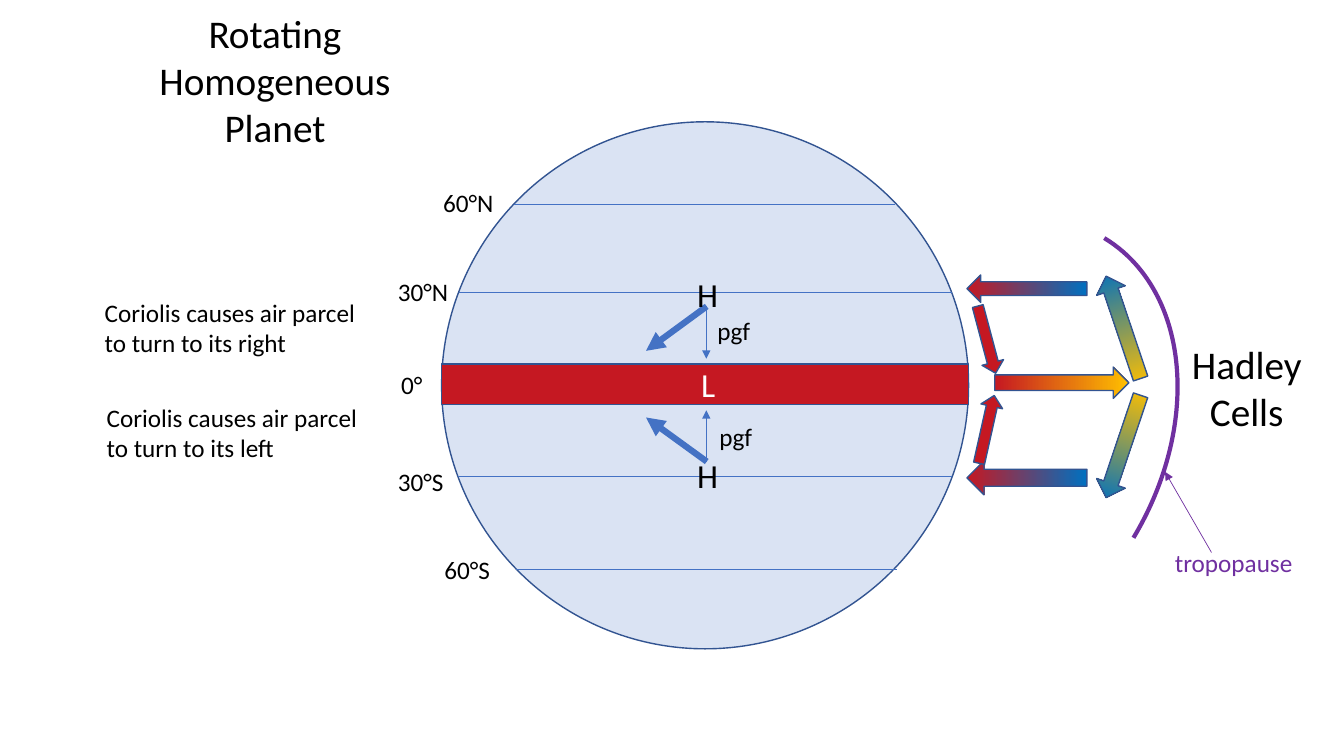
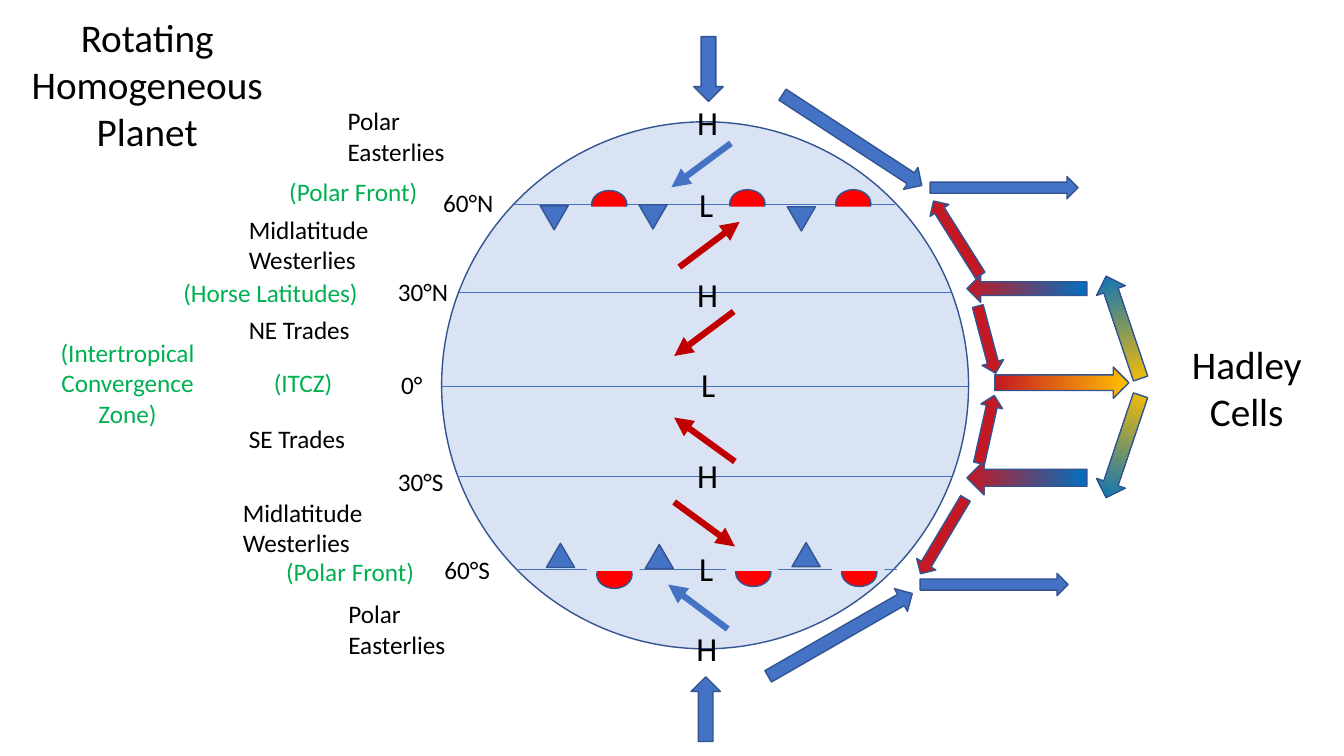
from lxml import etree
from pptx import Presentation
from pptx.dml.color import RGBColor
from pptx.enum import shapes, text
from pptx.oxml import ns
from pptx.util import Cm, Pt

BLACK = RGBColor(0x00, 0x00, 0x00)
WHITE = RGBColor(0xFF, 0xFF, 0xFF)
PALE = RGBColor(0xDA, 0xE3, 0xF3)
NAVY = RGBColor(0x32, 0x54, 0x91)
BLUE = RGBColor(0x44, 0x72, 0xC4)
COLD = RGBColor(0x00, 0x70, 0xC0)
GOLD = RGBColor(0xFF, 0xC0, 0x00)
WARM = RGBColor(0xC5, 0x18, 0x22)
DARK = RGBColor(0xC0, 0x00, 0x00)
RED = RGBColor(0xFF, 0x00, 0x00)
GREEN = RGBColor(0x00, 0xB0, 0x50)
PURPLE = RGBColor(0x70, 0x30, 0xA0)

KIND = shapes.MSO_SHAPE
RIGHT, LEFT = KIND.RIGHT_ARROW, KIND.LEFT_ARROW
START, MID = text.PP_ALIGN.LEFT, text.PP_ALIGN.CENTER


def shape(page, kind, box, fill, turn=0, edge=NAVY, width=1):
    """Fill is None, a colour, or (first colour, last colour, angle)."""
    item = page.shapes.add_shape(kind, *map(Cm, box))
    item.shadow.inherit = False
    item.rotation = turn
    if fill is None:
        item.fill.background()
    elif isinstance(fill, RGBColor):
        item.fill.solid()
        item.fill.fore_color.rgb = fill
    else:
        item.fill.gradient()
        item.fill.gradient_angle = fill[2]
        for stop, tint, place in zip(item.fill.gradient_stops, fill, (0, 1)):
            stop.color.rgb = tint
            stop.position = place
    if edge is None:
        item.line.fill.background()
    else:
        item.line.color.rgb = edge
        item.line.width = Pt(width)


def line(page, ends, tint, width=0.5, head=True):
    item = page.shapes.add_connector(shapes.MSO_CONNECTOR.STRAIGHT, *map(Cm, ends))
    item.line.color.rgb = tint
    item.line.width = Pt(width)
    props = item._element.spPr
    if head:
        etree.SubElement(props.find(ns.qn("a:ln")), ns.qn("a:tailEnd"), type="triangle")
    etree.SubElement(props, ns.qn("a:effectLst"))


deck = Presentation()
deck.slide_width, deck.slide_height = Cm(33.87), Cm(19.05)
first, second = [deck.slides.add_slide(deck.slide_layouts[6]) for _ in range(2)]

# Shared globe, latitude lines and Hadley cell arrows
for page in (first, second):
    shape(page, KIND.OVAL, (11.13, 3.07, 13.28, 13.28), PALE)
    for y, west, east in [(9.73, 11.13, 24.41), (7.37, 11.56, 24), (5.16, 12.95, 22.56),
                          (12.01, 11.53, 23.98), (14.35, 13, 22.61)]:
        line(page, (west, y, east, y), BLUE, head=False)
    shape(page, RIGHT, (25.07, 9.25, 3.38, 0.79), (WARM, GOLD, 0))
    for y, turn in [(7.87, 71.4), (10.87, 288.6)]:
        shape(page, LEFT, (26.95, y, 2.72, 0.76), (GOLD, COLD, 180), turn)
    for y, tall in [(6.93, 0.69), (11.61, 0.86)]:
        shape(page, LEFT, (24.37, y, 3.02, tall), (WARM, COLD, 0))
    for y, turn in [(8.28, 75.1), (10.54, 282.6)]:
        shape(page, RIGHT, (23.99, y, 1.75, 0.56), WARM, turn)

# First slide: equator band, turning winds, tropopause
shape(first, KIND.RECTANGLE, (11.13, 9.17, 13.28, 1.02), WARM)
for y, turned, straight in [(7.72, 8.84, 9.04), (11.63, 10.52, 10.34)]:
    line(first, (17.81, y, 16.28, turned), BLUE, 4.5)
    line(first, (17.8, y, 17.8, straight), BLUE)
shape(first, KIND.ARC, (20.17, 5.13, 9.04, 12.19), None, 31, PURPLE, 3)
line(first, (30.53, 13.92, 29.36, 11.89), PURPLE)

# Second slide: polar fronts, with half discs cut off by a cover
for turn, spikes, discs, cover in [
        (180, [(16.1, 5.16), (13.61, 5.18), (19.84, 5.21)],
         [(21.06, 4.78), (18.39, 4.78), (14.91, 4.8)], 5.21),
        (0, [(16.26, 13.72), (13.77, 13.69), (19.96, 13.67)],
         [(21.21, 14.07), (18.54, 14.07), (15.04, 14.12)], 13.96)]:
    for x, y in spikes:
        shape(second, KIND.ISOSCELES_TRIANGLE, (x, y, 0.71, 0.61), BLUE, turn)
    for x, y in discs:
        shape(second, KIND.OVAL, (x, y, 0.89, 0.71), RED)
        shape(second, KIND.RECTANGLE, (x - 0.24, cover, 1.32, 0.43), PALE, edge=None)

# Second slide: surface winds
for tint, ends in [(DARK, (18.49, 7.85, 16.99, 8.97)), (DARK, (18.52, 11.63, 16.99, 10.52)),
                   (DARK, (17.12, 6.73, 18.64, 5.59)), (DARK, (16.99, 12.65, 18.52, 13.77)),
                   (BLUE, (18.42, 3.61, 16.92, 4.72)), (BLUE, (18.34, 15.85, 16.84, 14.73))]:
    line(second, ends, tint, 4.5)

# Second slide: polar and midlatitude cell arrows
for box, tint, turn in [
        ((19.38, 3.2, 4.19, 0.66), BLUE, 33.1), ((19.08, 15.67, 4.19, 0.66), BLUE, 330.1),
        ((17.04, 1.37, 1.63, 0.74), BLUE, 90), ((16.97, 17.5, 1.63, 0.74), BLUE, 270),
        ((23.01, 5.72, 2.21, 0.56), WARM, 237.8), ((22.66, 13.23, 2.21, 0.56), WARM, 120.8),
        ((23.44, 4.45, 3.73, 0.56), BLUE, 0), ((23.19, 14.45, 3.73, 0.56), BLUE, 0)]:
    shape(second, RIGHT, box, tint, turn)

# Words: text, left, top, width, size, colour, alignment
TITLE = "Rotating\nHomogeneous\nPlanet"
shared = [
    ("0°", 9.86, 9.17, 1.07, 18, BLACK, START),
    ("30°N", 9.78, 6.83, 1.8, 18, BLACK, START),
    ("30°S", 9.78, 11.63, 1.68, 18, BLACK, START),
    ("60°N", 10.92, 4.6, 1.8, 18, BLACK, START),
    ("60°S", 10.95, 13.84, 1.68, 18, BLACK, START),
    ("Hadley\nCells", 29.77, 8.46, 3.3, 28, BLACK, MID),
    ("H", 17.32, 6.78, 1.04, 24, BLACK, START),
    ("H", 17.32, 11.35, 1.04, 24, BLACK, START),
]
turning = [
    (TITLE, 3.73, 0.1, 6.4, 28, BLACK, MID),
    ("L", 17.42, 9.04, 0.86, 24, WHITE, START),
    ("Coriolis causes air parcel\nto turn to its right", 2.39, 7.37, 6.88, 18, BLACK, START),
    ("Coriolis causes air parcel\nto turn to its left", 2.44, 10.01, 6.88, 18, BLACK, START),
    ("pgf", 17.83, 7.82, 1.35, 18, BLACK, START),
    ("pgf", 17.88, 10.49, 1.35, 18, BLACK, START),
    ("tropopause", 29.36, 13.67, 3.51, 18, PURPLE, START),
]
belts = [
    (TITLE, 0.51, 0.2, 6.4, 28, BLACK, MID),
    ("L", 17.42, 9.04, 0.86, 24, BLACK, START),
    ("L", 17.37, 4.5, 0.86, 24, BLACK, START),
    ("L", 17.37, 13.69, 0.86, 24, BLACK, START),
    ("H", 17.32, 2.44, 1.04, 24, BLACK, START),
    ("H", 17.3, 15.7, 1.04, 24, BLACK, START),
    ("NE Trades", 6.02, 7.8, 3.07, 18, BLACK, START),
    ("SE Trades", 6.02, 10.54, 2.97, 18, BLACK, START),
    ("Midlatitude\nWesterlies", 6.02, 5.28, 3.56, 18, BLACK, START),
    ("Midlatitude\nWesterlies", 5.87, 12.4, 3.56, 18, BLACK, START),
    ("Polar\nEasterlies", 8.51, 2.54, 2.97, 18, BLACK, START),
    ("Polar\nEasterlies", 8.53, 14.96, 2.97, 18, BLACK, START),
    ("(Intertropical\nConvergence\nZone)", 1.27, 8.38, 3.89, 18, GREEN, MID),
    ("(ITCZ)", 6.65, 9.14, 2.01, 18, GREEN, START),
    ("(Horse Latitudes)", 4.37, 6.86, 5.16, 18, GREEN, START),
    ("(Polar Front)", 7.04, 4.32, 3.78, 18, GREEN, START),
    ("(Polar Front)", 6.96, 13.89, 3.78, 18, GREEN, START),
]
for page, words in [(first, shared + turning), (second, shared + belts)]:
    for label, x, y, wide, size, tint, align in words:
        rows = label.count("\n") + 1
        tall = Cm(0.25) + Pt(1.2 * size * rows)
        frame = page.shapes.add_textbox(Cm(x), Cm(y), Cm(wide), tall).text_frame
        frame.word_wrap = False
        frame.auto_size = text.MSO_AUTO_SIZE.SHAPE_TO_FIT_TEXT
        frame.text = label
        for para in frame.paragraphs:
            para.alignment = align
            para.font.name = "Calibri"
            para.font.size = Pt(size)
            para.font.color.rgb = tint

deck.save("out.pptx")
